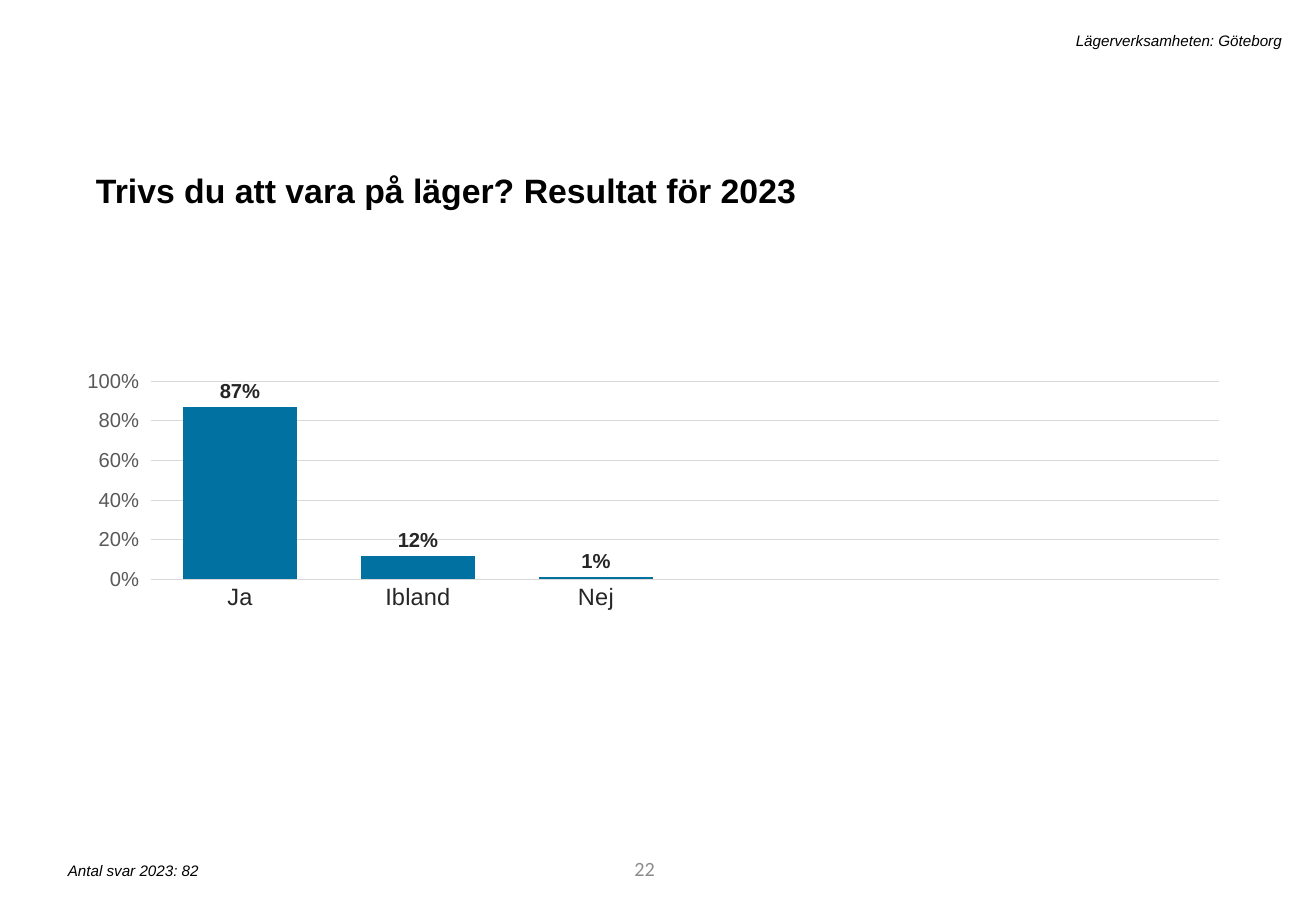
from lxml import etree
from pptx import Presentation
from pptx.chart.data import CategoryChartData as Data
from pptx.dml.color import RGBColor
from pptx.enum.chart import XL_CHART_TYPE as Kind, XL_LABEL_POSITION as Pos, XL_TICK_MARK as Tick
from pptx.enum.text import MSO_ANCHOR as Anchor, MSO_AUTO_SIZE as Fit, PP_ALIGN as Align
from pptx.oxml import parse_xml
from pptx.oxml.ns import nsdecls, qn
from pptx.util import Pt

BLACK, DARK, GREY, RULE, BLUE = "000000", "262626", "595959", "D9D9D9", "0071A1"


def tint(color, code):
    color.rgb = RGBColor.from_string(code)


class Page:
    """Holds the style and the current slide."""

    def __init__(self, deck, face="Arial"):
        self.face = face
        self.slide = deck.slides.add_slide(deck.slide_layouts[5])

    def style(self, font, size, code, bold=False, italic=False, face=None):
        font.name, font.size = face or self.face, Pt(size)
        font.bold, font.italic = bold, italic
        tint(font.color, code)

    def fill(self, shape, words, size, code=BLACK, align=Align.LEFT,
             anchor=Anchor.TOP, **look):
        frame = shape.text_frame
        frame.word_wrap, frame.auto_size = True, Fit.NONE
        frame.vertical_anchor = anchor
        para = frame.paragraphs[0]
        para.alignment = align
        run = para.add_run()
        run.text = words
        self.style(run.font, size, code, **look)
        return para

    def title(self, words, x, y, w, h):
        shape = self.slide.shapes.title
        shape.left, shape.top, shape.width, shape.height = map(Pt, (x, y, w, h))
        para = self.fill(shape, words, 20, bold=True)
        para.line_spacing, para.space_before = 1.2, Pt(10)

    def text(self, words, x, y, w, h, size, **look):
        box = self.slide.shapes.add_textbox(*map(Pt, (x, y, w, h)))
        self.fill(box, words, size, **look)

    def line(self, line, code):
        line.width = Pt(0.75)
        tint(line.color, code)

    def chart(self, cats, vals, x, y, w, h, plot):
        data = Data(number_format="0%")
        data.categories = cats
        data.add_series("Series 1", vals)
        chart = self.slide.shapes.add_chart(
            Kind.COLUMN_CLUSTERED, *map(Pt, (x, y, w, h)), data).chart
        chart.has_legend = chart.has_title = False
        self.style(chart.font, 10, BLACK)

        # Columns and their labels
        bars = chart.plots[0]
        bars.gap_width, bars.vary_by_categories = 55, False
        series = bars.series[0]
        series.format.fill.solid()
        tint(series.format.fill.fore_color, BLUE)
        labels = series.data_labels
        labels.show_value, labels.position = True, Pos.OUTSIDE_END
        labels.number_format, labels.number_format_is_linked = "0%", False
        self.style(labels.font, 12, DARK, bold=True)

        # Axes
        cat, val = chart.category_axis, chart.value_axis
        cat.major_tick_mark = Tick.NONE
        self.style(cat.tick_labels.font, 14, DARK)
        self.line(cat.format.line, RULE)
        val.minimum_scale, val.maximum_scale, val.major_unit = 0, 1, 0.2
        val.major_tick_mark = Tick.OUTSIDE
        val.tick_labels.number_format = "0%"
        val.tick_labels.number_format_is_linked = False
        self.style(val.tick_labels.font, 12, GREY)
        val.format.line.fill.background()
        self.line(val.major_gridlines.format.line, RULE)

        # Inner plot area, given in points within the chart
        area = chart.plots[0]._element.getparent()
        for old in area.findall(qn("c:layout")):
            area.remove(old)
        layout = parse_xml(f"<c:layout {nsdecls('c')}><c:manualLayout/></c:layout>")
        parts = [("layoutTarget", "inner"), ("xMode", "edge"), ("yMode", "edge")]
        parts += [(key, part / full) for key, part, full in zip("xywh", plot, (w, h, w, h))]
        for key, value in parts:
            etree.SubElement(layout[0], qn("c:" + key)).set("val", str(value))
        area.insert(0, layout)


def main():
    deck = Presentation()
    deck.slide_width, deck.slide_height = Pt(780), Pt(540)
    page = Page(deck)

    # Heading and page header
    page.title("Trivs du att vara på läger? Resultat för 2023", 49.7, 92.2, 676.8, 33.8)
    page.text("Lägerverksamheten: Göteborg", 128.9, 15.1, 637.9, 18, 9,
              align=Align.RIGHT, italic=True)

    # Result chart, with three empty slots at the right
    page.chart(["Ja", "Ibland", "Nej", "", "", ""], [0.87, 0.12, 0.01, None, None, None],
               51.8, 182.2, 676.8, 284.4, plot=(36.5, 43.8, 634.2, 117.5))

    # Footer
    page.text("Antal svar 2023: 82", 33.1, 506.9, 317.5, 18, 9, italic=True)
    page.text("22", 219.6, 500.4, 175.7, 28.8, 12, code="8C8C8C",
              align=Align.RIGHT, anchor=Anchor.MIDDLE, face="Calibri")
    deck.save("out.pptx")


if __name__ == "__main__":
    main()
